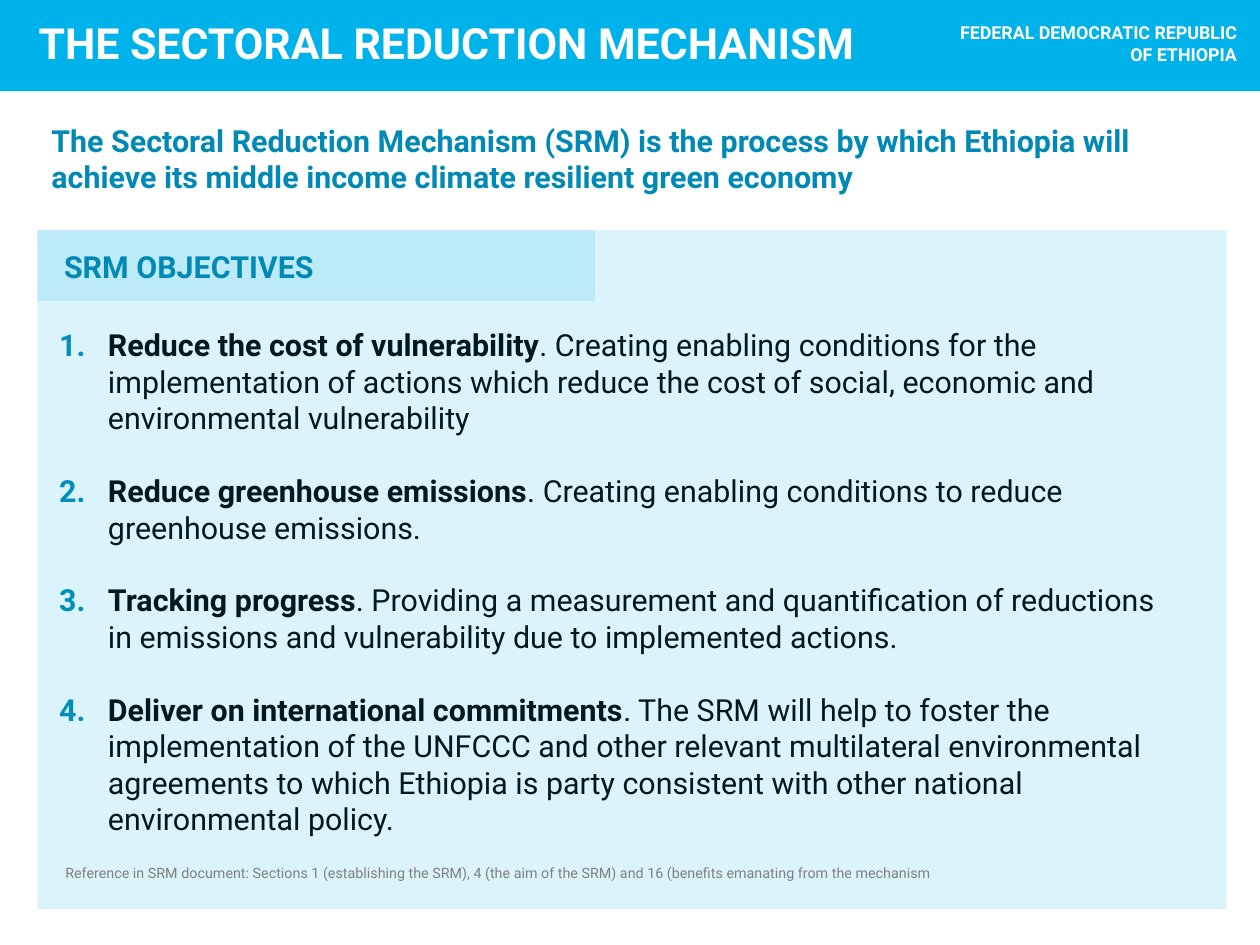
from lxml import etree
from pptx import Presentation
from pptx.dml.color import RGBColor
from pptx.enum.shapes import MSO_SHAPE
from pptx.enum.text import MSO_ANCHOR, MSO_AUTO_SIZE, PP_ALIGN
from pptx.oxml.ns import qn
from pptx.util import Inches, Pt

RECT = MSO_SHAPE.RECTANGLE
TOP, BOTTOM = MSO_ANCHOR.TOP, MSO_ANCHOR.BOTTOM
LEFT, RIGHT = PP_ALIGN.LEFT, PP_ALIGN.RIGHT
NO_FIT = MSO_AUTO_SIZE.NONE

FONT = "Roboto"
UNIT = Inches(0.1)
COLUMNS, ROWS = 98, 73.5
MARGIN, PANEL_TOP, PANEL_WIDTH = 2.9, 17.9, 92.5
TEXT_SIZE = 17
HANGING = Inches(0.38)
COLORS = {
    "sky": "00B2EA",
    "teal": "0089B4",
    "white": "FFFFFF",
    "black": "000000",
    "gray": "7F7F7F",
}

OBJECTIVES = [
    ("Reduce the cost of vulnerability",
     ". Creating enabling conditions for the implementation of actions which "
     "reduce the cost of social, economic and environmental vulnerability"),
    ("Reduce greenhouse emissions",
     ". Creating enabling conditions to reduce greenhouse emissions."),
    ("Tracking progress",
     ". Providing a measurement and quantification of reductions in emissions "
     "and vulnerability due to implemented actions."),
    ("Deliver on international commitments",
     ". The SRM will help to foster the implementation of the UNFCCC and other "
     "relevant multilateral environmental agreements to which Ethiopia is party "
     "consistent with other national environmental policy."),
]


def grid(*cells):
    return [round(cell * UNIT) for cell in cells]


def place(sp, *cells):
    sp.left, sp.top, sp.width, sp.height = grid(*cells)
    return sp


def add_panel(s, *cells, color="sky", opacity=100):
    sp = s.shapes.add_shape(RECT, *grid(*cells))
    sp.shadow.inherit = False
    sp.fill.solid()
    sp.fill.fore_color.rgb = RGBColor.from_string(COLORS[color])
    sp.line.fill.background()
    if opacity < 100:
        clr = sp.fill._xPr.find(".//" + qn("a:srgbClr"))
        etree.SubElement(clr, qn("a:alpha"), val=str(opacity * 1000))


def add_run(p, text, size=TEXT_SIZE, color="teal", bold=False):
    r = p.add_run()
    r.text = text
    r.font.name = FONT
    r.font.size = Pt(size)
    r.font.bold = bold
    r.font.color.rgb = RGBColor.from_string(COLORS[color])


def prepare_frame(sp, anchor=TOP, inset=True):
    tf = sp.text_frame
    tf.word_wrap = True
    tf.auto_size = NO_FIT
    tf.vertical_anchor = anchor
    if not inset:
        tf.margin_left = tf.margin_right = tf.margin_top = tf.margin_bottom = 0
    return tf


def write(sp, text, align=LEFT, anchor=TOP, inset=True, **font):
    p = prepare_frame(sp, anchor, inset).paragraphs[0]
    p.alignment = align
    add_run(p, text, **font)


def add_label(s, text, *cells, **style):
    write(s.shapes.add_textbox(*grid(*cells)), text, **style)


def number(p):
    pPr = p._p.get_or_add_pPr()
    pPr.set("marL", str(HANGING))
    pPr.set("indent", str(-HANGING))
    clr = etree.SubElement(pPr, qn("a:buClr"))
    etree.SubElement(clr, qn("a:srgbClr"), val=COLORS["teal"])
    etree.SubElement(pPr, qn("a:buFont"), typeface=FONT)
    etree.SubElement(pPr, qn("a:buAutoNum"), type="arabicPeriod")


def write_objectives(sp, objectives):
    tf = prepare_frame(sp)
    for i, (name, detail) in enumerate(objectives):
        p = tf.add_paragraph() if i else tf.paragraphs[0]
        p.space_before = Pt(TEXT_SIZE * 1.2 if i else 0)
        number(p)
        add_run(p, name, color="black", bold=True)
        add_run(p, detail, color="black")


def main():
    prs = Presentation()
    prs.slide_width, prs.slide_height = grid(COLUMNS, ROWS)
    s = prs.slides.add_slide(prs.slide_layouts[1])
    title, body = s.placeholders

    add_panel(s, 0, 0, COLUMNS, 7.1)
    add_panel(s, MARGIN, PANEL_TOP, 43.4, 5.5, opacity=14)
    add_panel(s, MARGIN, PANEL_TOP, PANEL_WIDTH, 52.8, opacity=14)

    write(place(title, 3, 9, PANEL_WIDTH, 5.7),
          "The Sectoral Reduction Mechanism (SRM) is the process by which "
          "Ethiopia will achieve its middle income climate resilient green economy",
          bold=True)
    add_label(s, "THE SECTORAL REDUCTION MECHANISM", 3, 1.3, 78.3, 4,
              anchor=BOTTOM, inset=False, size=24, color="white", bold=True)
    add_label(s, "FEDERAL DEMOCRATIC REPUBLIC OF ETHIOPIA", 73.4, 1.7, 22.8, 5,
              align=RIGHT, inset=False, size=10, color="white", bold=True)
    add_label(s, "SRM OBJECTIVES", 4, 18.8, 42.9, 5.7, bold=True)
    write_objectives(place(body, 3.6, 24.9, 89.5, 45.8), OBJECTIVES)
    add_label(s, "Reference in SRM document: Sections 1 (establishing the SRM), "
              "4 (the aim of the SRM) and 16 (benefits emanating from the mechanism",
              4.1, 66.7, 79.4, 2.4, size=8, color="gray")

    prs.save("out.pptx")


if __name__ == "__main__":
    main()
